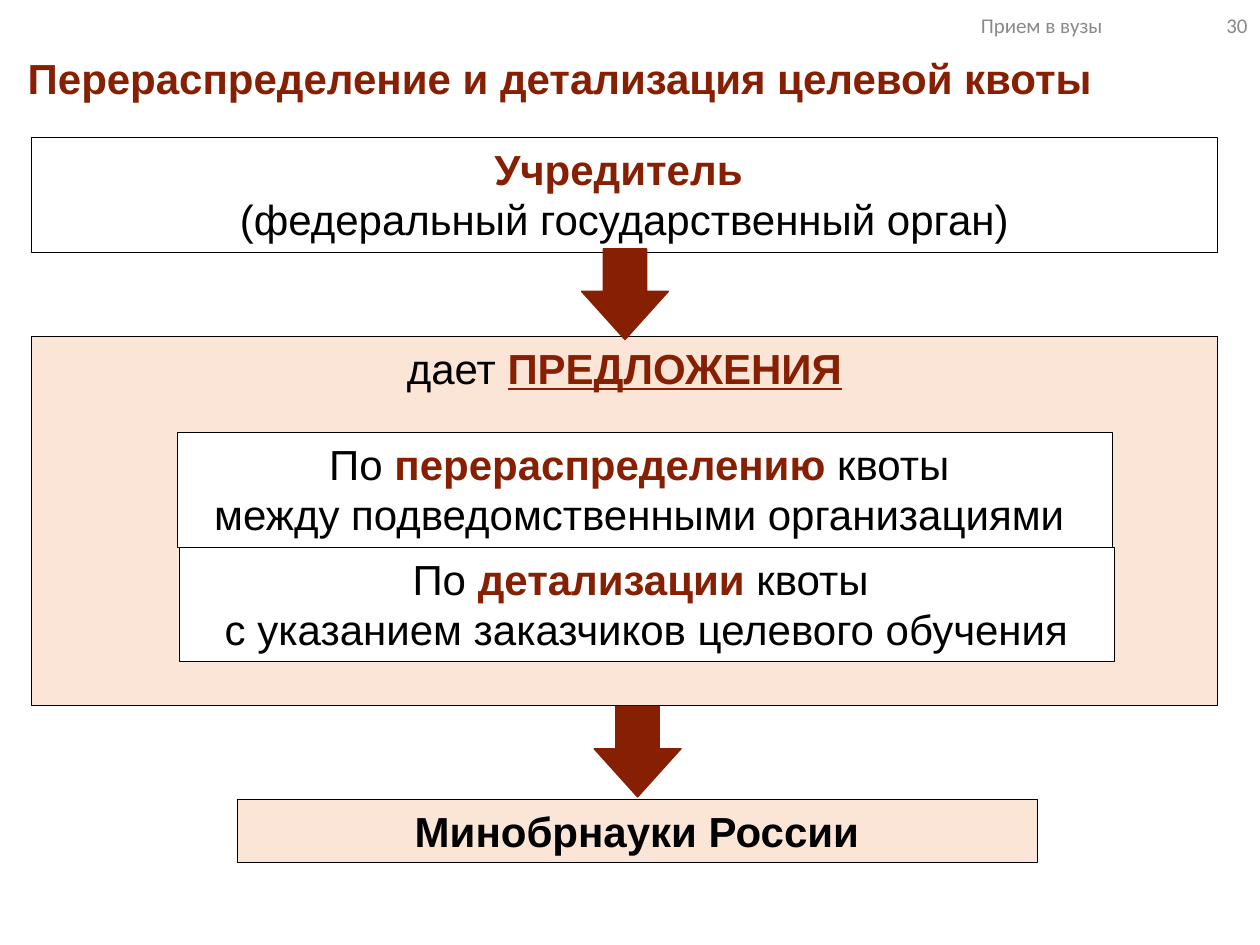
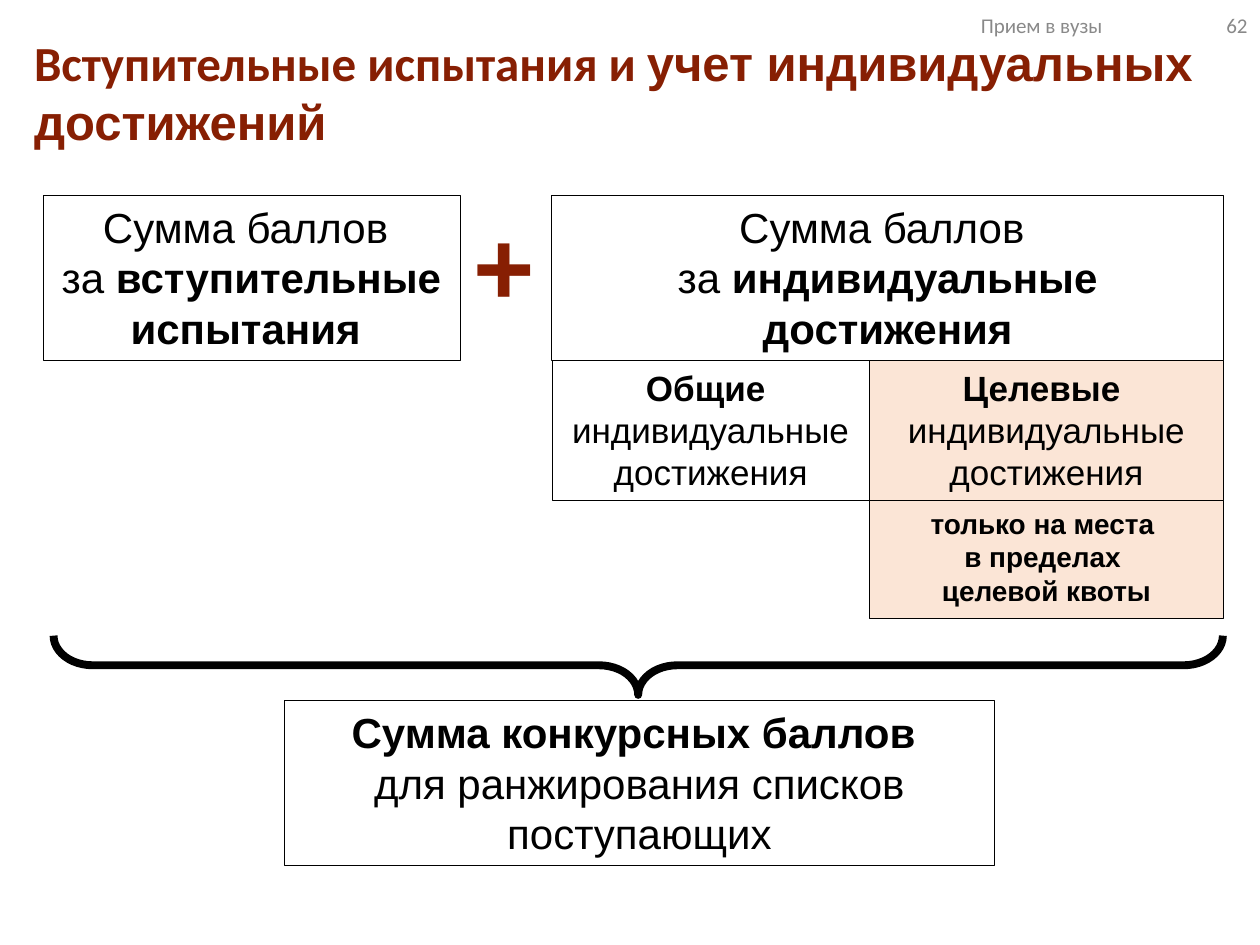
from dataclasses import dataclass
from typing import NamedTuple, Optional

from pptx import Presentation
from pptx import util as u
from pptx.dml.color import RGBColor
from pptx.enum import shapes, text

COLORS = {
    "accent": "871F03",
    "peach": "FBE5D6",
    "white": "FFFFFF",
    "black": "000000",
    "grey": "898989",
}
BODY_FONT, HEADER_FONT = "Arial", "Calibri"
HEADER_TEXT = "Прием в вузы"
LEFT, CENTER, RIGHT = text.PP_ALIGN.LEFT, text.PP_ALIGN.CENTER, text.PP_ALIGN.RIGHT
TOP, MIDDLE = text.MSO_ANCHOR.TOP, text.MSO_ANCHOR.MIDDLE


class Run(NamedTuple):
    text: str
    bold: bool = False
    color: Optional[str] = None
    underline: bool = False
    font: Optional[str] = None


class Rect(NamedTuple):
    left: float
    top: float
    width: float
    height: float

    def emu(self) -> tuple:
        return tuple(u.Inches(v) for v in self)


@dataclass
class Box:
    at: Rect
    lines: list
    fill: str = "white"
    size: int = 24
    border: float = 0.25


def rgb(name: str) -> RGBColor:
    return RGBColor.from_string(COLORS[name])


def write(tf, lines: list, size: int, color: str = "black", align=CENTER,
          anchor=TOP, font: str = BODY_FONT) -> None:
    """Fill a text frame; each line is a list of runs."""
    tf.word_wrap = True
    tf.auto_size = text.MSO_AUTO_SIZE.NONE
    tf.vertical_anchor = anchor
    for i, runs in enumerate(lines):
        p = tf.paragraphs[0] if i == 0 else tf.add_paragraph()
        p.alignment = align
        p.font.size = u.Pt(size)
        p.font.name = font
        p.font.color.rgb = rgb(color)
        p.font.bold = all(run.bold for run in runs)
        for run in runs:
            r = p.add_run()
            r.text = run.text
            if run.bold != p.font.bold:
                r.font.bold = run.bold
            if run.color:
                r.font.color.rgb = rgb(run.color)
            if run.underline:
                r.font.underline = True
            if run.font:
                r.font.name = run.font


def add_text(s, at: Rect, lines: list, size: int, **style) -> None:
    write(s.shapes.add_textbox(*at.emu()).text_frame, lines, size, **style)


def add_preset(s, kind, at: Rect, line: str, width: float, fill: Optional[str] = None):
    sp = s.shapes.add_shape(kind, *at.emu())
    sp.shadow.inherit = False
    if fill:
        sp.fill.solid()
        sp.fill.fore_color.rgb = rgb(fill)
    else:
        sp.fill.background()
    sp.line.color.rgb = rgb(line)
    sp.line.width = u.Pt(width)
    return sp


def add_box(s, box: Box) -> None:
    sp = add_preset(s, shapes.MSO_SHAPE.RECTANGLE, box.at, "black", box.border, box.fill)
    write(sp.text_frame, box.lines, box.size)


def add_down_arrow(s, left: float, top: float) -> None:
    sp = add_preset(s, shapes.MSO_SHAPE.RIGHT_ARROW, Rect(left, top, 0.72, 0.69),
                    "accent", 0.75, "accent")
    sp.rotation = 90
    sp.adjustments[1] = 0.555


def add_slide(prs, number: int, title_at: Rect, title: list, size: int):
    """Start a slide with its title, running header and number."""
    s = prs.slides.add_slide(prs.slide_layouts[5])
    sp = s.shapes.title
    sp.left, sp.top, sp.width, sp.height = title_at.emu()
    write(sp.text_frame, [title], size, color="accent", align=LEFT)
    for left, width, label in ((7.05, 1.8, HEADER_TEXT), (8.85, 1.15, str(number))):
        add_text(s, Rect(left, 0, width, 0.4), [[Run(label)]], 12, color="grey",
                 align=RIGHT, anchor=MIDDLE, font=HEADER_FONT)
    return s


def build_quota_slide(prs) -> None:
    s = add_slide(prs, 30, Rect(0.12, 0.37, 9.88, 0.47),
                  [Run("Перераспределение и детализация целевой квоты", True)], 24)
    # Founder, proposals and ministry
    boxes = [
        Box(Rect(0.25, 1.09, 9.41, 0.91),
            [[Run("Учредитель ", True, "accent")],
             [Run("(федеральный государственный орган)")]]),
        Box(Rect(0.25, 2.67, 9.41, 2.93),
            [[Run("дает "), Run("ПРЕДЛОЖЕНИЯ", True, "accent", True)]], "peach"),
        Box(Rect(1.41, 3.43, 7.42, 0.91),
            [[Run("По "), Run("перераспределению ", True, "accent"), Run("квоты ")],
             [Run("между подведомственными организациями ")]]),
        Box(Rect(1.42, 4.34, 7.42, 0.91),
            [[Run("По "), Run("детализации", True, "accent"), Run(" квоты ")],
             [Run("с указанием заказчиков целевого обучения")]]),
        Box(Rect(1.88, 6.34, 6.35, 0.5), [[Run("Минобрнауки России", True)]], "peach"),
    ]
    for box in boxes:
        add_box(s, box)
    # Flow arrows
    add_down_arrow(s, 4.6, 1.99)
    add_down_arrow(s, 4.7, 5.62)


def build_score_slide(prs) -> None:
    s = add_slide(prs, 62, Rect(0.17, 0.21, 9.8, 0.47),
                  [Run("Вступительные испытания и ", True, font=HEADER_FONT),
                   Run("учет индивидуальных достижений", True)], 28)
    # Score components and their total
    achievements = [Run("индивидуальные достижения")]
    boxes = [
        Box(Rect(4.38, 1.55, 5.33, 1.31),
            [[Run("Сумма баллов ")],
             [Run("за "), Run("индивидуальные достижения", True)]], border=0.75),
        Box(Rect(0.34, 1.55, 3.31, 1.31),
            [[Run("Сумма баллов ")],
             [Run("за "), Run("вступительные испытания ", True)]]),
        Box(Rect(2.26, 5.56, 5.63, 1.31),
            [[Run("Сумма конкурсных баллов ", True)],
             [Run("для ранжирования списков поступающих")]]),
        Box(Rect(4.38, 2.86, 2.52, 1.11), [[Run("Общие ", True)], achievements], size=20),
        Box(Rect(6.9, 2.86, 2.81, 1.45), [[Run("Целевые ", True)], achievements],
            "peach", 20),
        Box(Rect(6.9, 3.97, 2.81, 0.94),
            [[Run(line, True)] for line in
             ("только на места ", "в пределах ", "целевой квоты")], "peach", 16),
    ]
    for box in boxes:
        add_box(s, box)
    # Plus sign and summing brace
    add_text(s, Rect(3.61, 1.54, 0.78, 1.11), [[Run("+", True)]], 60, color="accent")
    brace = add_preset(s, shapes.MSO_SHAPE.LEFT_BRACE, Rect(4.83, 0.64, 0.47, 9.28),
                       "black", 4.5)
    brace.rotation = 270
    brace.adjustments[0] = 0.661


def main() -> None:
    prs = Presentation()
    prs.slide_width, prs.slide_height = u.Inches(10), u.Inches(7.5)
    build_quota_slide(prs)
    build_score_slide(prs)
    prs.save("out.pptx")


if __name__ == "__main__":
    main()
